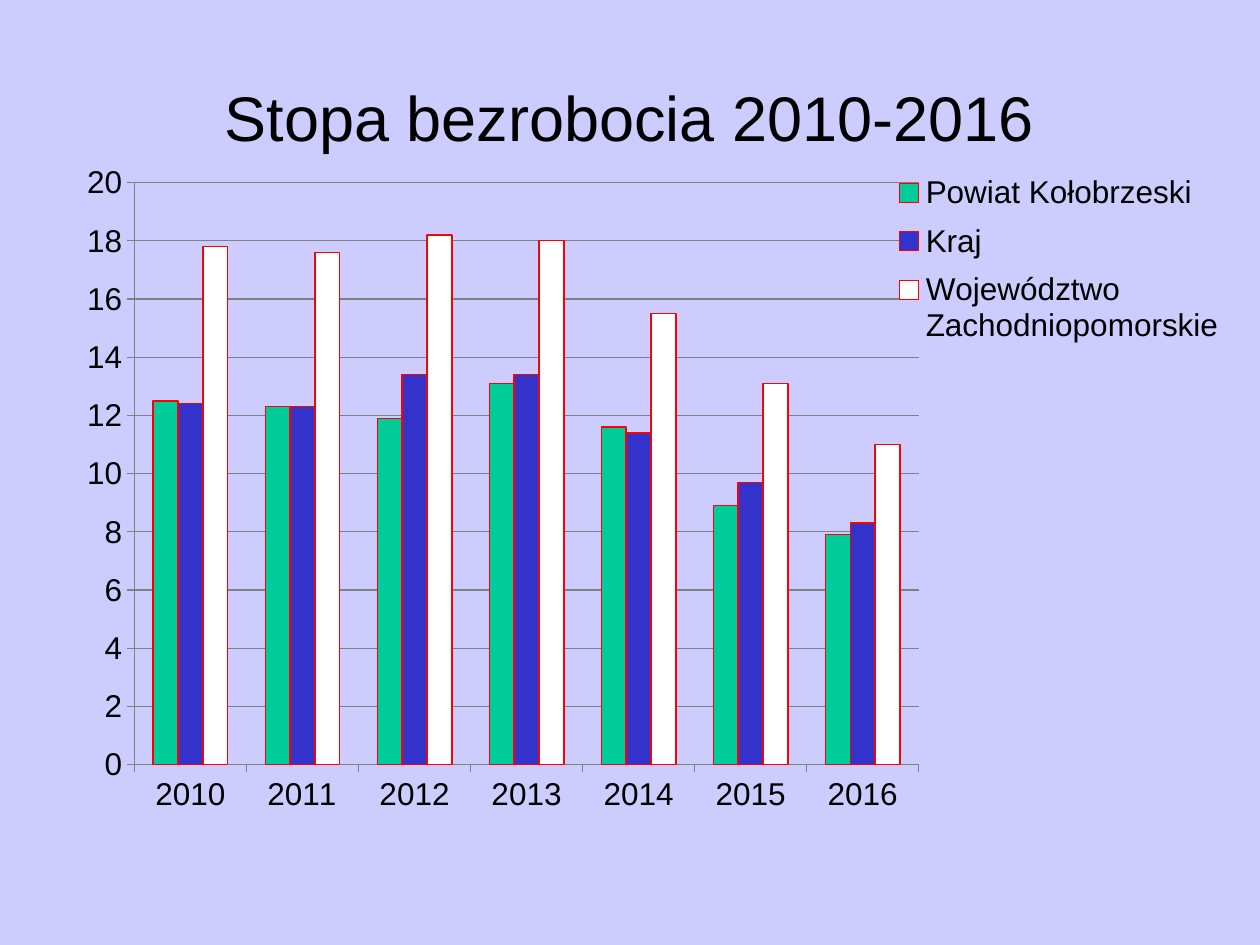
from lxml import etree
from pptx import Presentation
from pptx.chart.data import CategoryChartData
from pptx.dml.color import RGBColor
from pptx.enum import chart as ch, text as tx
from pptx.oxml import ns
from pptx.util import Inches, Pt

LAVENDER = RGBColor(0xCC, 0xCC, 0xFF)
BLACK = RGBColor(0, 0, 0)
GREY = RGBColor(0x80, 0x80, 0x80)
RED = RGBColor(0xFF, 0, 0)
GREEN = RGBColor(0, 0xCC, 0x99)
BLUE = RGBColor(0x33, 0x33, 0xCC)
WHITE = RGBColor(0xFF, 0xFF, 0xFF)

YEARS = [str(year) for year in range(2010, 2017)]
RATES = [
    ("Powiat Kołobrzeski", GREEN, (12.5, 12.3, 11.9, 13.1, 11.6, 8.9, 7.9)),
    ("Kraj", BLUE, (12.4, 12.3, 13.4, 13.4, 11.4, 9.7, 8.3)),
    ("Województwo Zachodniopomorskie", WHITE, (17.8, 17.6, 18.2, 18, 15.5, 13.1, 11)),
]


class SlideBuilder:
    """Holds the slide style and adds each kind of element."""

    font_name = "Arial"

    def __init__(self, deck):
        self.slide = deck.slides.add_slide(deck.slide_layouts[5])
        background = self.slide.background.fill
        background.solid()
        background.fore_color.rgb = LAVENDER

    def style_font(self, font, size):
        font.name = self.font_name
        font.size = Pt(size)
        font.color.rgb = BLACK

    def title(self, wording, left, top, width, height):
        heading = self.slide.shapes.title
        heading.left, heading.top = Inches(left), Inches(top)
        heading.width, heading.height = Inches(width), Inches(height)
        heading.text_frame.text = wording
        heading.text_frame.vertical_anchor = tx.MSO_ANCHOR.MIDDLE
        paragraph = heading.text_frame.paragraphs[0]
        paragraph.alignment = tx.PP_ALIGN.CENTER
        self.style_font(paragraph.font, 36)

    def place(self, part, index, box, inner=False):
        for old in part.findall(ns.qn("c:layout")):
            part.remove(old)
        layout = etree.Element(ns.qn("c:layout"))
        manual = etree.SubElement(layout, ns.qn("c:manualLayout"))
        settings = [("layoutTarget", "inner")] if inner else []
        settings += [("xMode", "edge"), ("yMode", "edge"), *zip("xywh", box)]
        for tag, value in settings:
            etree.SubElement(manual, ns.qn(f"c:{tag}"), val=str(value))
        part.insert(index, layout)

    def column_chart(self, categories, series, left, top, width, height):
        data = CategoryChartData()
        data.categories = categories
        for name, _, values in series:
            data.add_series(name, values)
        chart = self.slide.shapes.add_chart(
            ch.XL_CHART_TYPE.COLUMN_CLUSTERED,
            Inches(left), Inches(top), Inches(width), Inches(height), data,
        ).chart
        self.style_font(chart.font, 18)
        chart.has_title = False
        plot = chart.plots[0]
        plot.gap_width, plot.overlap = 150, 0
        plot.vary_by_categories = False
        for column, (_, color, _) in zip(plot.series, series):
            column.format.fill.solid()
            column.format.fill.fore_color.rgb = color
            column.format.line.color.rgb = RED
            column.format.line.width = Pt(0.75)
            column.invert_if_negative = False

        rate_axis = chart.value_axis
        rate_axis.minimum_scale, rate_axis.maximum_scale = 0, 20
        rate_axis.major_unit = 2
        rate_axis.has_major_gridlines = True
        rate_axis.tick_labels.number_format = "General"
        rate_axis.tick_labels.number_format_is_linked = False
        for axis in (chart.category_axis, rate_axis):
            axis.major_tick_mark = ch.XL_TICK_MARK.OUTSIDE
            axis.minor_tick_mark = ch.XL_TICK_MARK.NONE
        for part in (chart.category_axis, rate_axis, rate_axis.major_gridlines):
            part.format.line.color.rgb = GREY
            part.format.line.width = Pt(0.75)

        chart.has_legend = True
        legend = chart.legend
        legend.position = ch.XL_LEGEND_POSITION.RIGHT
        legend.include_in_layout = False
        self.style_font(legend.font, 18)
        self.place(legend._element, 1, (0.7, 0.01, 0.3, 0.28))
        plot_area = plot._element.getparent()
        self.place(plot_area, 0, (0.06, 0.04, 0.67, 0.84), inner=True)


def main():
    deck = Presentation()
    deck.slide_width, deck.slide_height = Inches(10), Inches(7.5)
    builder = SlideBuilder(deck)
    builder.title("Stopa bezrobocia 2010-2016", 0.5, 0.14, 8.99, 1.57)
    builder.column_chart(YEARS, RATES, 0.51, 1.23, 9.29, 5.5)
    deck.save("out.pptx")


if __name__ == "__main__":
    main()
